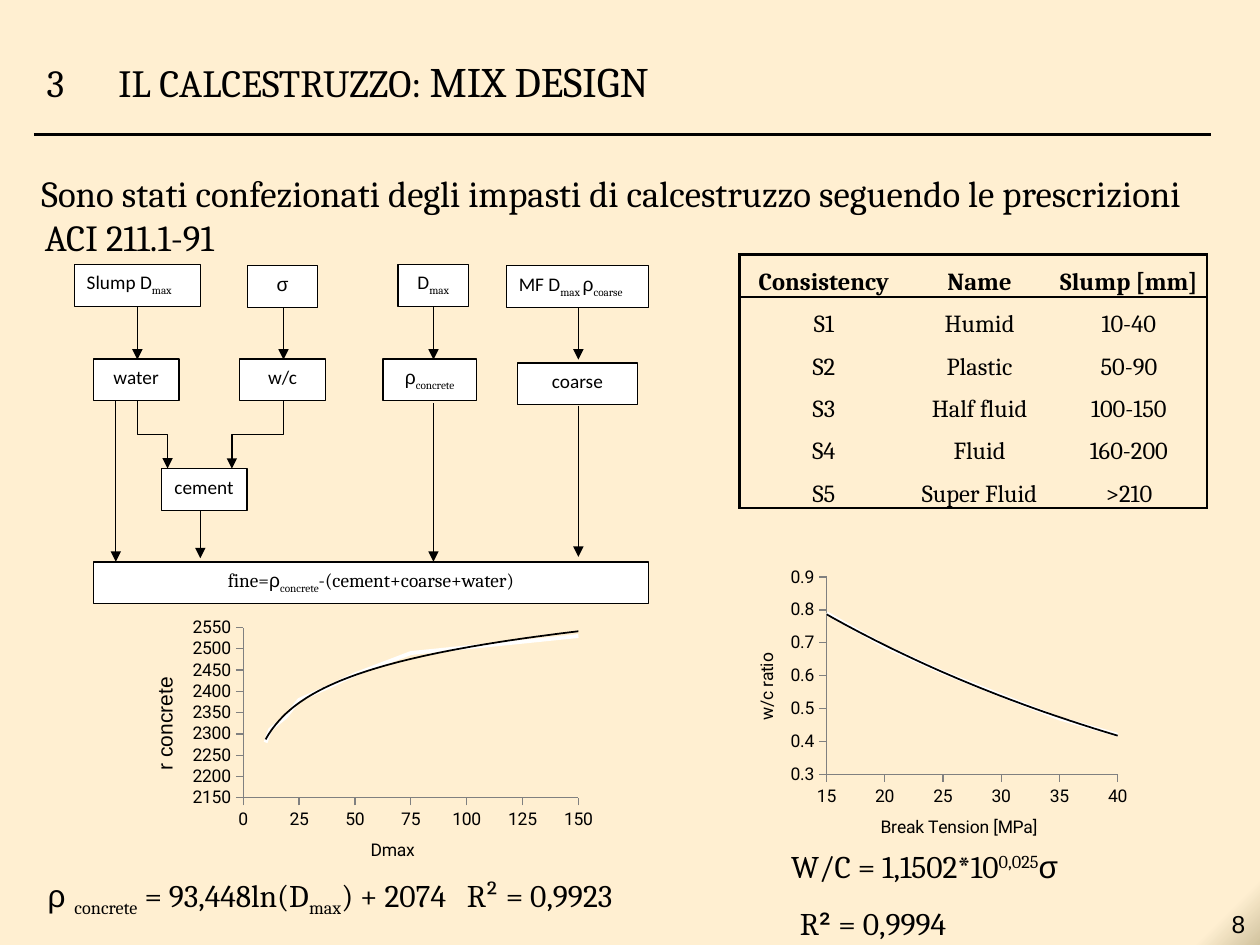
import pptx
import pptx.chart.data
import pptx.dml.color
import pptx.enum.chart
import pptx.enum.shapes
import pptx.enum.text
import pptx.oxml
import pptx.oxml.ns
import pptx.util
from lxml import etree

Pt = pptx.util.Pt
RGBColor = pptx.dml.color.RGBColor
Align = pptx.enum.text.PP_ALIGN
Anchor = pptx.enum.text.MSO_ANCHOR
Connector = pptx.enum.shapes.MSO_CONNECTOR
qn = pptx.oxml.ns.qn

BLACK = RGBColor(0x00, 0x00, 0x00)
WHITE = RGBColor(0xFF, 0xFF, 0xFF)
GREY = RGBColor(0x80, 0x80, 0x80)
CREAM = RGBColor(0xFF, 0xEF, 0xD1)
SAND = RGBColor(0xD1, 0xC3, 0x9F)

SUB, SUPER = -25000, 30000
GREEK = {"name": "Arial"}
SERIF = {"name": "Cambria"}


class SlideBuilder:
    """Holds the text style and the current page."""

    base = {"name": "Cambria", "size": Pt(18), "bold": False}

    def __init__(self, deck):
        self.page = deck.slides.add_slide(deck.slide_layouts[5])
        fill = self.page.background.fill
        fill.gradient()
        fill.gradient_angle = 315
        for stop, position, color in zip(fill.gradient_stops, (0.97, 1), (CREAM, SAND)):
            stop.position = position
            stop.color.rgb = color

    def format_font(self, font, **values):
        for key, value in {**self.base, **values}.items():
            setattr(font, key, value)
        font.color.rgb = BLACK

    def fill_para(self, para, spans, align=Align.LEFT, hang=None, tab=None, **values):
        """Fill a paragraph with (text, format, baseline) spans."""
        para.alignment = align
        props = para._p.get_or_add_pPr()
        if hang:
            margin, indent = hang
            props.set("marL", str(Pt(margin)))
            props.set("indent", str(Pt(indent)))
        if tab:
            stops = etree.SubElement(props, qn("a:tabLst"))
            etree.SubElement(stops, qn("a:tab"), pos=str(Pt(tab)), algn="l")
        for text, own, baseline in spans:
            span = para.add_run()
            span.text = text
            self.format_font(span.font, **{**values, **own})
            if baseline:
                span._r.get_or_add_rPr().set("baseline", str(baseline))

    def format_frame(self, frame, **values):
        settings = {"word_wrap": True, "vertical_anchor": Anchor.TOP,
                    "auto_size": pptx.enum.text.MSO_AUTO_SIZE.NONE}
        for key, value in {**settings, **values}.items():
            setattr(frame, key, value)

    def title(self, area, spans, hang):
        box = self.page.shapes.title
        box.left, box.top, box.width, box.height = map(Pt, area)
        self.format_frame(box.text_frame, vertical_anchor=Anchor.MIDDLE,
                          margin_left=Pt(4.3), margin_right=Pt(10))
        self.fill_para(box.text_frame.paragraphs[0], spans, hang=hang)

    def text(self, area, spans, frame=None, **values):
        box = self.page.shapes.add_textbox(*map(Pt, area))
        self.format_frame(box.text_frame, **(frame or {}))
        self.fill_para(box.text_frame.paragraphs[0], spans, **values)
        return box.text_frame

    def node(self, center, top, width, spans, align=Align.CENTER):
        shapes = pptx.enum.shapes.MSO_SHAPE
        box = self.page.shapes.add_shape(
            shapes.RECTANGLE, Pt(center - width / 2), Pt(top), Pt(width), Pt(23.8))
        box.shadow.inherit = False
        box.fill.solid()
        box.fill.fore_color.rgb = WHITE
        box.line.color.rgb = BLACK
        box.line.width = Pt(0.75)
        self.format_frame(box.text_frame)
        self.fill_para(box.text_frame.paragraphs[0], spans, align, size=Pt(11))

    def line(self, x1, y1, x2, y2, width=0.75, arrow=True, kind=Connector.STRAIGHT):
        link = self.page.shapes.add_connector(kind, Pt(x1), Pt(y1), Pt(x2), Pt(y2))
        link.line.color.rgb = BLACK
        link.line.width = Pt(width)
        props = link._element.spPr
        if arrow:
            etree.SubElement(props.find(qn("a:ln")), qn("a:tailEnd"), type="triangle")
        etree.SubElement(props, qn("a:effectLst"))
        return link

    def elbow(self, x1, y1, x2, y2):
        """Down, across, down: a level elbow turned by a quarter."""
        mid_x, mid_y = (x1 + x2) / 2, (y1 + y2) / 2
        half_w, half_h = (y2 - y1) / 2, (x2 - x1) / 2
        link = self.line(mid_x - half_w, mid_y + half_h, mid_x + half_w,
                         mid_y - half_h, kind=Connector.ELBOW)
        link._element.spPr.find(qn("a:xfrm")).set("rot", str(90 * 60000))

    def table(self, left, top, widths, row_height, rows):
        table = self.page.shapes.add_table(
            len(rows), len(widths), Pt(left), Pt(top),
            Pt(sum(widths)), Pt(row_height * len(rows))).table
        table.first_row = table.horz_banding = False
        for column, width in zip(table.columns, widths):
            column.width = Pt(width)
        for r, values in enumerate(rows):
            table.rows[r].height = Pt(row_height)
            for c, value in enumerate(values):
                cell = table.cell(r, c)
                for side, inset in zip(("left", "right", "top", "bottom"), (5, 5, 0, 0)):
                    setattr(cell, "margin_" + side, Pt(inset))
                self.borders(cell, L=c == 0, R=c == len(widths) - 1,
                             T=r < 2, B=r in (0, len(rows) - 1))
                cell.fill.background()
                para = cell.text_frame.paragraphs[0]
                para.line_spacing = 1.5
                self.fill_para(para, [(value, {}, 0)], Align.CENTER,
                               size=Pt(14), bold=r == 0)

    def borders(self, cell, **sides):
        props = cell._tc.get_or_add_tcPr()
        for side, drawn in sides.items():
            edge = etree.SubElement(props, qn("a:ln" + side), w=str(Pt(1.5)))
            fill = etree.SubElement(edge, qn("a:solidFill" if drawn else "a:noFill"))
            if drawn:
                etree.SubElement(fill, qn("a:srgbClr"), val=str(BLACK))

    def trend_chart(self, area, plot, points, trend, x_axis, y_axis):
        """Scatter line with a trend; an axis is (title, format, min, max, step)."""
        data = pptx.chart.data.XyChartData()
        series = data.add_series("Series 1")
        for x, y in points:
            series.add_data_point(x, y)
        kinds = pptx.enum.chart.XL_CHART_TYPE
        chart = self.page.shapes.add_chart(
            kinds.XY_SCATTER_LINES_NO_MARKERS, *map(Pt, area), data).chart
        chart.has_legend = chart.has_title = False
        chart.plots[0].vary_by_categories = False
        label = {"name": "Roboto", "size": Pt(10)}
        self.format_font(chart.font, **label)
        axes = (chart.category_axis, x_axis), (chart.value_axis, y_axis)
        for axis, (title, own, low, high, step) in axes:
            settings = {"minimum_scale": low, "maximum_scale": high, "major_unit": step,
                        "has_major_gridlines": False,
                        "major_tick_mark": pptx.enum.chart.XL_TICK_MARK.OUTSIDE}
            for key, value in settings.items():
                setattr(axis, key, value)
            axis.format.line.color.rgb = GREY
            self.format_font(axis.tick_labels.font, **label)
            para = axis.axis_title.text_frame.paragraphs[0]
            self.fill_para(para, [(title, {**label, **own}, 0)], Align.CENTER)
        drawn = chart.plots[0].series[0]
        drawn.smooth = False
        drawn.format.line.color.rgb = WHITE
        drawn.format.line.width = Pt(2.25)
        names = pptx.oxml.ns.nsdecls("c", "a")
        drawn._element.find(qn("c:xVal")).addprevious(pptx.oxml.parse_xml(
            f'<c:trendline {names}><c:spPr><a:ln w="{Pt(1)}"><a:solidFill>'
            f'<a:srgbClr val="{BLACK}"/></a:solidFill></a:ln></c:spPr>'
            f'<c:trendlineType val="{trend}"/><c:dispRSqr val="0"/>'
            '<c:dispEq val="0"/></c:trendline>'))
        # Fixed inner plot area
        area_xml = chart._chartSpace.find(".//" + qn("c:plotArea"))
        for old in area_xml.findall(qn("c:layout")):
            area_xml.remove(old)
        places = "".join(f'<c:{k} val="{v}"/>' for k, v in zip("xywh", plot))
        area_xml.insert(0, pptx.oxml.parse_xml(
            f'<c:layout {names}><c:manualLayout><c:layoutTarget val="inner"/>'
            '<c:xMode val="edge"/><c:yMode val="edge"/>'
            f'{places}</c:manualLayout></c:layout>'))


def main():
    deck = pptx.Presentation()
    deck.slide_width, deck.slide_height = Pt(720), Pt(540)
    slide = SlideBuilder(deck)

    # Heading and introduction
    slide.title((19.4, 26, 675, 40), [("3\tIL CALCESTRUZZO: ", {"size": Pt(22)}, 0),
                                      ("MIX DESIGN", {"size": Pt(24)}, 0)], (44, -41))
    slide.line(19.4, 77, 692, 77, width=2, arrow=False)
    slide.text((19.4, 94, 675, 60), [
        ("Sono stati confezionati degli impasti di calcestruzzo seguendo le "
         "prescrizioni ACI 211.1-91", {}, 0)],
        {"margin_left": Pt(4.3), "margin_right": Pt(10)}, hang=(2, -2), size=Pt(21))

    # Flow chart
    sans = {"name": "Calibri"}
    rho, sub_max = ("ρ", GREEK, 0), ("max", SERIF, SUB)
    columns = (78.5, 162, 247.7, 330.5)
    for x in columns:
        slide.line(x, 175.5, x, 205.5)
    for x, start, end in ((66.2, 228.2, 321), (114.5, 292.3, 319),
                          (columns[2], 230.4, 321), (columns[3], 231.8, 318.2)):
        slide.line(x, start, x, end)
    slide.elbow(columns[0], 228.5, 95.8, 267.8)
    slide.elbow(columns[1], 229, 132.5, 267.8)
    slide.node(78.5, 151.2, 72, [("Slump D", sans, 0), sub_max], Align.LEFT)
    slide.node(161.5, 151.9, 40.3, [("σ", GREEK, 0)])
    slide.node(247.6, 151.2, 40.3, [("D", sans, 0), sub_max])
    slide.node(330.1, 151.9, 81.4, [("MF D", sans, 0), ("max ", SERIF, SUB), rho,
                                    ("coarse", SERIF, SUB)], Align.LEFT)
    for center, top, width, name in ((77.8, 205.2, 49, "water"), (161.5, 205.2, 49, "w/c"),
                                     (330, 207.4, 68.4, "coarse"),
                                     (116.6, 267.8, 49, "cement")):
        slide.node(center, top, width, [(name, sans, 0)])
    density = [rho, ("concrete", SERIF, SUB)]
    slide.node(245.5, 205.2, 53.3, density)
    slide.node(212, 321.1, 317.5, [("fine=", SERIF, 0), *density,
                                   ("-(cement+coarse+water)", SERIF, 0)])

    # Consistency classes
    slide.table(422.6, 145.4, (96.5, 81.4, 89.3), 24.2, (
        ("Consistency", "Name", "Slump [mm]"), ("S1", "Humid", "10-40"),
        ("S2", "Plastic", "50-90"), ("S3", "Half fluid", "100-150"),
        ("S4", "Fluid", "160-200"), ("S5", "Super Fluid", ">210")))

    # Water/cement ratio
    ratios = zip((40, 35, 30, 25, 20, 15), (0.42, 0.47, 0.54, 0.61, 0.69, 0.79))
    slide.trend_chart((416.9, 321.1, 231.1, 173.5), (0.24, 0.05, 0.72, 0.65), ratios, "exp",
                      ("Break Tension [MPa]", {}, 15, 40, 5),
                      ("w/c ratio", {}, 0.3, 0.9, 0.1))
    frame = slide.text((445, 480.2, 221, 62), [
        ("W/C = 1,1502*10", {}, 0), ("0,025", {}, SUPER), ("σ", GREEK, 0)])
    para = frame.add_paragraph()
    para.space_before = Pt(11)
    slide.fill_para(para, [("R", {}, 0), ("² ", {"name": "Roboto"}, 0),
                           ("= 0,9994", {}, 0)], hang=(5, 0))

    # Concrete density
    densities = zip((10, 12, 19, 25, 38, 50, 75, 150),
                    (2280, 2310, 2340, 2380, 2410, 2440, 2490, 2530))
    slide.trend_chart((70.6, 349.2, 273.6, 157), (0.25, 0.06, 0.7, 0.62), densities, "log",
                      ("Dmax", {}, 0, 150, 25),
                      ("r concrete", {"name": "Arial", "size": Pt(12)}, 2150, 2550, 50))
    slide.text((20.2, 496.8, 448, 29), [
        ("ρ ", GREEK, 0), ("concrete", {}, SUB), (" = 93,448ln(D", {}, 0), ("max", {}, SUB),
        (") + 2074\tR² = 0,9923", {}, 0)], tab=239.5)

    # Page number
    slide.text((695.5, 516.2, 24.5, 23.8), [("8", GREEK, 0)],
               {"word_wrap": False, "vertical_anchor": Anchor.BOTTOM},
               align=Align.CENTER, size=Pt(14))
    deck.save("out.pptx")


if __name__ == "__main__":
    main()
